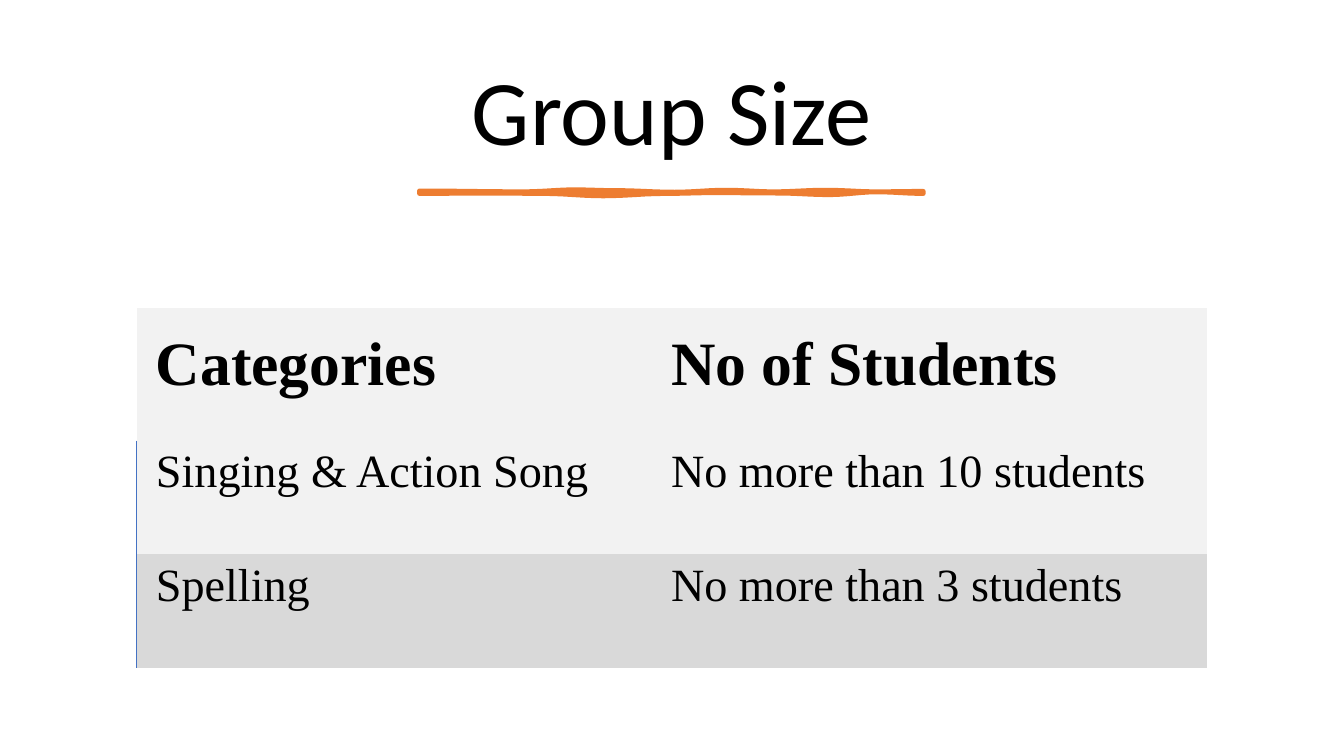
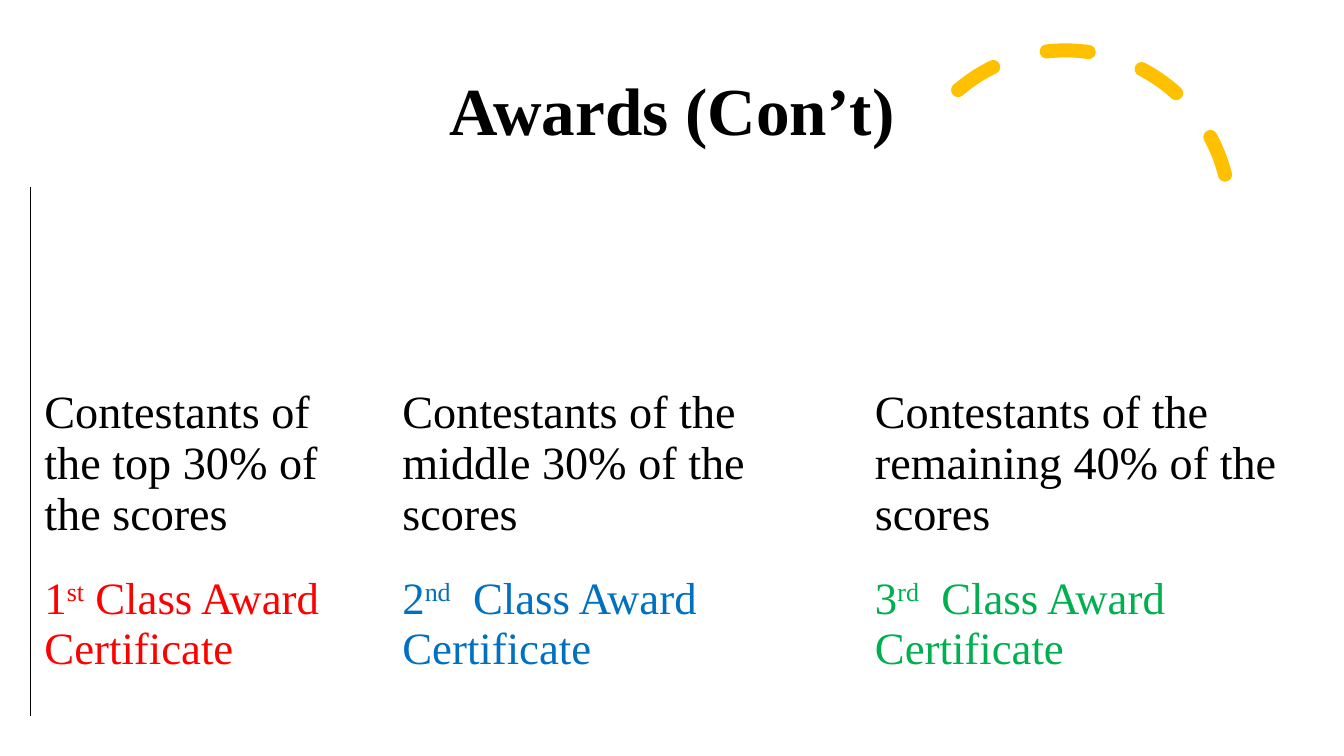
"""Build two slides: a group size table and an awards table."""
import math
from dataclasses import dataclass

import pptx
import pptx.dml.color
import pptx.enum.dml
import pptx.enum.shapes
import pptx.enum.text
import pptx.oxml
import pptx.oxml.ns
import pptx.util

Cm = pptx.util.Cm
Pt = pptx.util.Pt
Anchor = pptx.enum.text.MSO_ANCHOR


@dataclass(frozen=True)
class Theme:
    sans: str = "Calibri"
    serif: str = "Times New Roman"
    black: str = "000000"
    orange: str = "ED7D31"
    gold: str = "FFC000"
    blue: str = "4472C4"
    pale: str = "F2F2F2"
    grey: str = "D9D9D9"
    first: str = "FF0000"
    second: str = "0070C0"
    third: str = "00B050"
    display: int = 66
    title: int = 48
    header: int = 44
    body: int = 33
    award: int = 32


THEME = Theme()
NO_STYLE = "{2D5ABB26-0587-4C30-8999-92F81FD0307C}"

GROUP_TITLE = "Group Size"
GROUP_ROWS = [
    ("Categories", "No of Students"),
    ("Singing & Action Song", "No more than 10 students"),
    ("Spelling", "No more than 3 students"),
]
GROUP_FILLS = [THEME.pale, THEME.pale, THEME.grey]

AWARDS_TITLE = "Awards (Con’t)"
AWARDS = [
    ("Contestants of the top 30% of the scores",
     "1", "st", " Class Award Certificate", THEME.first),
    ("Contestants of the middle 30% of the scores",
     "2", "nd", "  Class Award Certificate", THEME.second),
    ("Contestants of the remaining 40% of the scores",
     "3", "rd", "  Class Award Certificate", THEME.third),
]

STROKE_TOP = [(10.57, 4.81), (13.2, 4.83), (14.5, 4.78), (15.5, 4.8),
              (17, 4.84), (18.3, 4.79), (19.5, 4.83), (20.8, 4.79),
              (22.1, 4.83), (23.27, 4.82)]
STROKE_BOTTOM = [(23.27, 4.88), (22.1, 4.84), (20.9, 4.91), (19.6, 4.87),
                 (18, 4.86), (16.8, 4.88), (15.2, 4.94), (13.7, 4.88),
                 (12.4, 4.87), (10.57, 4.88)]


def rgb(color):
    return pptx.dml.color.RGBColor.from_string(color)


def add_text(para, text, size=THEME.body, font=THEME.serif,
             color=THEME.black, bold=False, raised=False):
    span = para.add_run()
    span.text = text
    span.font.size = Pt(size)
    span.font.name = font
    span.font.bold = bold
    span.font.color.rgb = rgb(color)
    if raised:
        span.font._element.set("baseline", "30000")


def add_title(page, text, place, **style):
    box = page.shapes.add_textbox(*map(Cm, place))
    frame = box.text_frame
    frame.word_wrap = True
    frame.vertical_anchor = Anchor.MIDDLE
    para = frame.paragraphs[0]
    para.alignment = pptx.enum.text.PP_ALIGN.CENTER
    para.line_spacing = 0.9
    add_text(para, text, **style)


def add_left_border(cell, color, width):
    border = pptx.oxml.parse_xml(
        f'<a:lnL {pptx.oxml.ns.nsdecls("a")} w="{Pt(width)}">'
        f'<a:solidFill><a:srgbClr val="{color}"/></a:solidFill></a:lnL>')
    cell._tc.get_or_add_tcPr().insert(0, border)


def add_plain_table(page, origin, widths, heights, insets):
    frame = page.shapes.add_table(
        len(heights), len(widths), *map(Cm, origin),
        Cm(sum(widths)), Cm(sum(heights)))
    table = frame.table
    table.first_row = table.horz_banding = False
    table._tbl.tblPr.find(pptx.oxml.ns.qn("a:tableStyleId")).text = NO_STYLE
    for column, width in zip(table.columns, widths):
        column.width = Cm(width)
    for row, height in zip(table.rows, heights):
        row.height = Cm(height)
    for cell in table.iter_cells():
        (cell.margin_left, cell.margin_top,
         cell.margin_right, cell.margin_bottom) = map(Cm, insets)
        cell.vertical_anchor = Anchor.TOP
        cell.fill.background()
    for cell in table.rows[0].cells:
        cell.vertical_anchor = Anchor.BOTTOM
    return table


def smooth(knots, steps=6):
    """Ease from knot to knot along a cosine."""
    points = [knots[0]]
    for (left, start), (right, end) in zip(knots, knots[1:]):
        for step in range(1, steps + 1):
            share = step / steps
            ease = (1 - math.cos(math.pi * share)) / 2
            points.append((left + (right - left) * share,
                           start + (end - start) * ease))
    return points


def add_brush_stroke(page):
    outline = [(Cm(x), Cm(y))
               for x, y in smooth(STROKE_TOP) + smooth(STROKE_BOTTOM)]
    builder = page.shapes.build_freeform(*outline[0])
    builder.add_line_segments(outline[1:], close=True)
    stroke = builder.convert_to_shape()
    stroke.shadow.inherit = False
    stroke.fill.solid()
    stroke.fill.fore_color.rgb = rgb(THEME.orange)
    stroke.line.color.rgb = rgb(THEME.orange)
    stroke.line.width = Pt(3.25)


def add_dashed_arc(page):
    arc = page.shapes.add_shape(
        pptx.enum.shapes.MSO_SHAPE.ARC, Cm(22.7), Cm(1.27), Cm(8.3), Cm(8.3))
    arc.shadow.inherit = False
    arc.adjustments[0] = 146.13
    arc.adjustments[1] = 0
    arc.rotation = 345.8
    arc.fill.background()
    arc.line.color.rgb = rgb(THEME.gold)
    arc.line.width = Pt(10)
    arc.line.dash_style = pptx.enum.dml.MSO_LINE.DASH
    arc._element.spPr.get_or_add_ln().set("cap", "rnd")


def build_group_size(page):
    add_title(page, GROUP_TITLE, (1.78, 1.17, 30.3, 3.48),
              size=THEME.display, font=THEME.sans)
    add_brush_stroke(page)
    table = add_plain_table(page, (3.45, 7.77), (12.98, 14),
                            (3.33, 2.87, 2.87), (0.48, 0.15, 0.71, 1.04))
    for index, (texts, fill) in enumerate(zip(GROUP_ROWS, GROUP_FILLS)):
        is_header = index == 0
        for cell, text in zip(table.rows[index].cells, texts):
            cell.fill.solid()
            cell.fill.fore_color.rgb = rgb(fill)
            add_text(cell.text_frame.paragraphs[0], text, bold=is_header,
                     size=THEME.header if is_header else THEME.body)
        if not is_header:
            add_left_border(table.cell(index, 0), THEME.blue, 1)


def build_awards(page):
    add_dashed_arc(page)
    add_title(page, AWARDS_TITLE, (2.34, 1.02, 29.2, 3.68),
              size=THEME.title, bold=True)
    table = add_plain_table(page, (0.76, 4.7), (9.02, 11.91, 11.02),
                            (9.68, 3.66), (0.36, 0.1, 0.51, 0.76))
    for column, (share, number, suffix, award, color) in enumerate(AWARDS):
        add_text(table.cell(0, column).text_frame.paragraphs[0], share)
        para = table.cell(1, column).text_frame.paragraphs[0]
        for text in (number, suffix, award):
            add_text(para, text, size=THEME.award, color=color,
                     raised=text == suffix)
    for row in range(2):
        add_left_border(table.cell(row, 0), THEME.black, 0.75)


def main():
    deck = pptx.Presentation()
    deck.slide_width, deck.slide_height = Cm(33.87), Cm(19.05)
    for build in (build_group_size, build_awards):
        build(deck.slides.add_slide(deck.slide_layouts[6]))
    deck.save("out.pptx")


if __name__ == "__main__":
    main()
